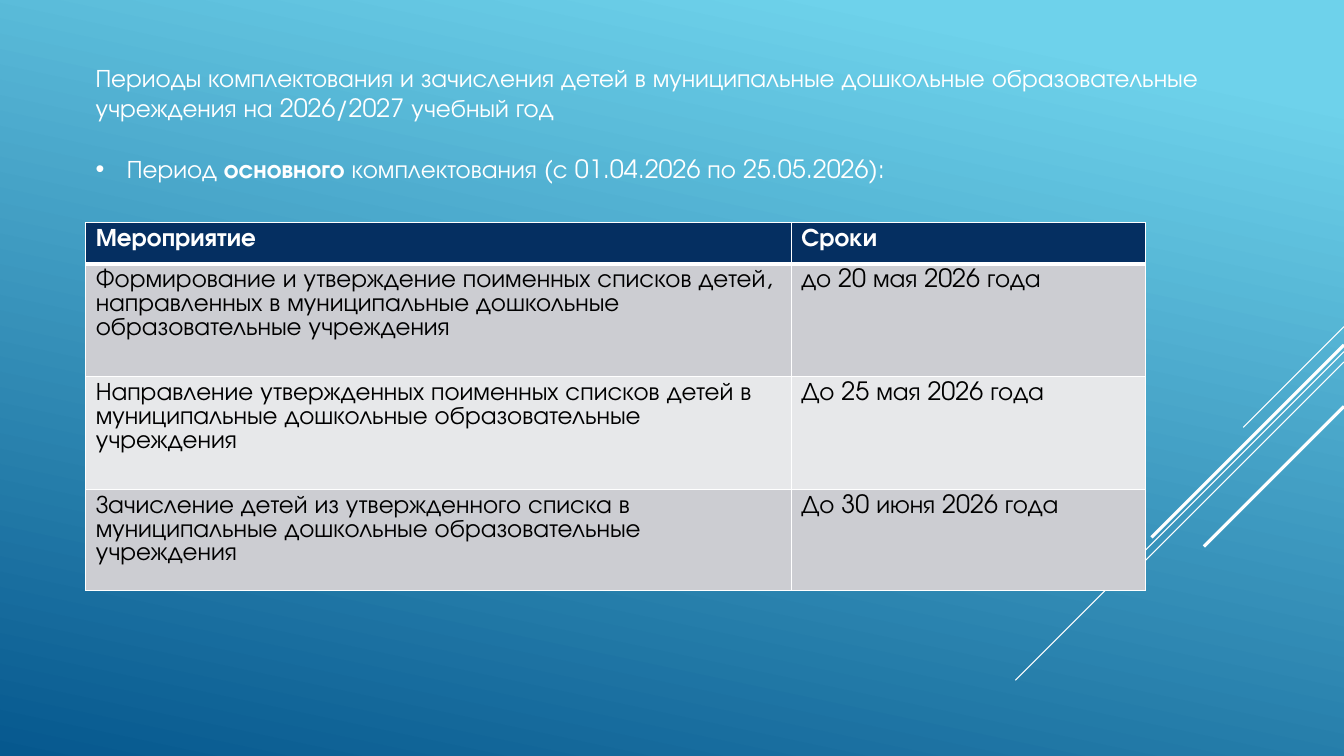
from typing import NamedTuple

from lxml.etree import SubElement
from pptx import Presentation
from pptx.dml.color import RGBColor
from pptx.enum.shapes import MSO_CONNECTOR
from pptx.oxml.ns import qn
from pptx.slide import Slide
from pptx.table import _Cell
from pptx.text.text import _Paragraph
from pptx.util import Cm, Pt

FONT = "TeX Gyre Adventor"
TEXT_SIZE = 18
TABLE_LINE_HEIGHT = 17
SLIDE_WIDTH, SLIDE_HEIGHT = 33.87, 19.05
COLORS = {
    "sky": "6ED2EB",
    "deep": "06588E",
    "white": "FFFFFF",
    "black": "000000",
    "header": "052F61",
    "odd_row": "CCCDD2",
    "even_row": "E7E8EA",
}


class Ray(NamedTuple):
    top: float
    reach: float
    weight: float


class Stage(NamedTuple):
    event: str
    deadline: str
    height: float


RAYS = [
    Ray(8.23, 2.54, 0.75),
    Ray(8.86, 8.28, 0.75),
    Ray(9.12, 5.26, 0.75),
    Ray(8.69, 4.85, 2.25),
    Ray(10.24, 3.53, 2.25),
]
STAGES = [
    Stage("Мероприятие", "Сроки", 1.04),
    Stage(
        "Формирование и утверждение поименных списков детей, направленных "
        "в муниципальные дошкольные образовательные учреждения",
        "до 20 мая 2026 года", 2.84,
    ),
    Stage(
        "Направление утвержденных поименных списков детей "
        "в муниципальные дошкольные образовательные учреждения",
        "До 25 мая 2026 года", 2.84,
    ),
    Stage(
        "Зачисление детей из утвержденного списка "
        "в муниципальные дошкольные образовательные учреждения",
        "До 30 июня 2026 года", 2.54,
    ),
]
COLUMN_WIDTHS = [17.78, 8.92]


def color(key: str) -> RGBColor:
    return RGBColor.from_string(COLORS[key])


def add_run(paragraph: _Paragraph, text: str, ink: str, bold: bool = False) -> None:
    run = paragraph.add_run()
    run.text = text
    run.font.name = FONT
    run.font.size = Pt(TEXT_SIZE)
    run.font.bold = bold
    run.font.color.rgb = color(ink)


def paint_background(slide: Slide) -> None:
    fill = slide.background.fill
    fill.gradient()
    fill.gradient_angle = 258
    for stop, key, position in zip(fill.gradient_stops, ("sky", "deep"), (0.1, 1)):
        stop.color.rgb = color(key)
        stop.position = position


def draw_ray(slide: Slide, ray: Ray) -> None:
    line = slide.shapes.add_connector(
        MSO_CONNECTOR.STRAIGHT,
        Cm(SLIDE_WIDTH), Cm(ray.top),
        Cm(SLIDE_WIDTH - ray.reach), Cm(ray.top + ray.reach),
    )
    line.line.color.rgb = color("white")
    line.line.width = Pt(ray.weight)
    SubElement(line._element.spPr, qn("a:effectLst"))


def add_heading(slide: Slide) -> None:
    heading = slide.shapes.add_textbox(Cm(2.16), Cm(1.45), Cm(29.46), Cm(3.33))
    frame = heading.text_frame
    frame.word_wrap = True
    add_run(
        frame.paragraphs[0],
        "Периоды комплектования и зачисления детей в муниципальные дошкольные "
        "образовательные учреждения на 2026/2027 учебный год",
        "white",
    )
    period = frame.add_paragraph()
    period.space_before = Pt(21.6)
    properties = period._p.get_or_add_pPr()
    properties.set("marL", str(Cm(0.79)))
    properties.set("indent", str(-Cm(0.79)))
    SubElement(properties, qn("a:buFont"), typeface="Arial")
    SubElement(properties, qn("a:buChar"), char="•")
    add_run(period, "Период ", "white")
    add_run(period, "основного", "white", bold=True)
    add_run(period, " комплектования (с 01.04.2026 по 25.05.2026):", "white")


def add_borders(cell: _Cell, top: float, bottom: float) -> None:
    properties = cell._tc.get_or_add_tcPr()
    for side, weight in (("L", 1), ("R", 1), ("T", top), ("B", bottom)):
        border = SubElement(properties, qn(f"a:ln{side}"), w=str(Pt(weight)))
        fill = SubElement(border, qn("a:solidFill"))
        SubElement(fill, qn("a:srgbClr"), val=COLORS["white"])


def add_schedule(slide: Slide) -> None:
    schedule = slide.shapes.add_table(
        len(STAGES), len(COLUMN_WIDTHS), Cm(2.16), Cm(5.61),
        Cm(sum(COLUMN_WIDTHS)), Cm(sum(stage.height for stage in STAGES)),
    ).table
    for column, width in zip(schedule.columns, COLUMN_WIDTHS):
        column.width = Cm(width)
    for index, stage in enumerate(STAGES):
        is_header = index == 0
        row = schedule.rows[index]
        row.height = Cm(stage.height)
        shade = "header" if is_header else "odd_row" if index % 2 else "even_row"
        for cell, text in zip(row.cells, (stage.event, stage.deadline)):
            add_borders(cell, 3 if index == 1 else 1, 3 if is_header else 1)
            cell.fill.solid()
            cell.fill.fore_color.rgb = color(shade)
            paragraph = cell.text_frame.paragraphs[0]
            paragraph.line_spacing = Pt(TABLE_LINE_HEIGHT)
            add_run(paragraph, text, "white" if is_header else "black", is_header)


def main() -> None:
    presentation = Presentation()
    presentation.slide_width = Cm(SLIDE_WIDTH)
    presentation.slide_height = Cm(SLIDE_HEIGHT)
    slide = presentation.slides.add_slide(presentation.slide_layouts[6])
    paint_background(slide)
    for ray in RAYS:
        draw_ray(slide, ray)
    add_heading(slide)
    add_schedule(slide)
    presentation.save("out.pptx")


if __name__ == "__main__":
    main()
